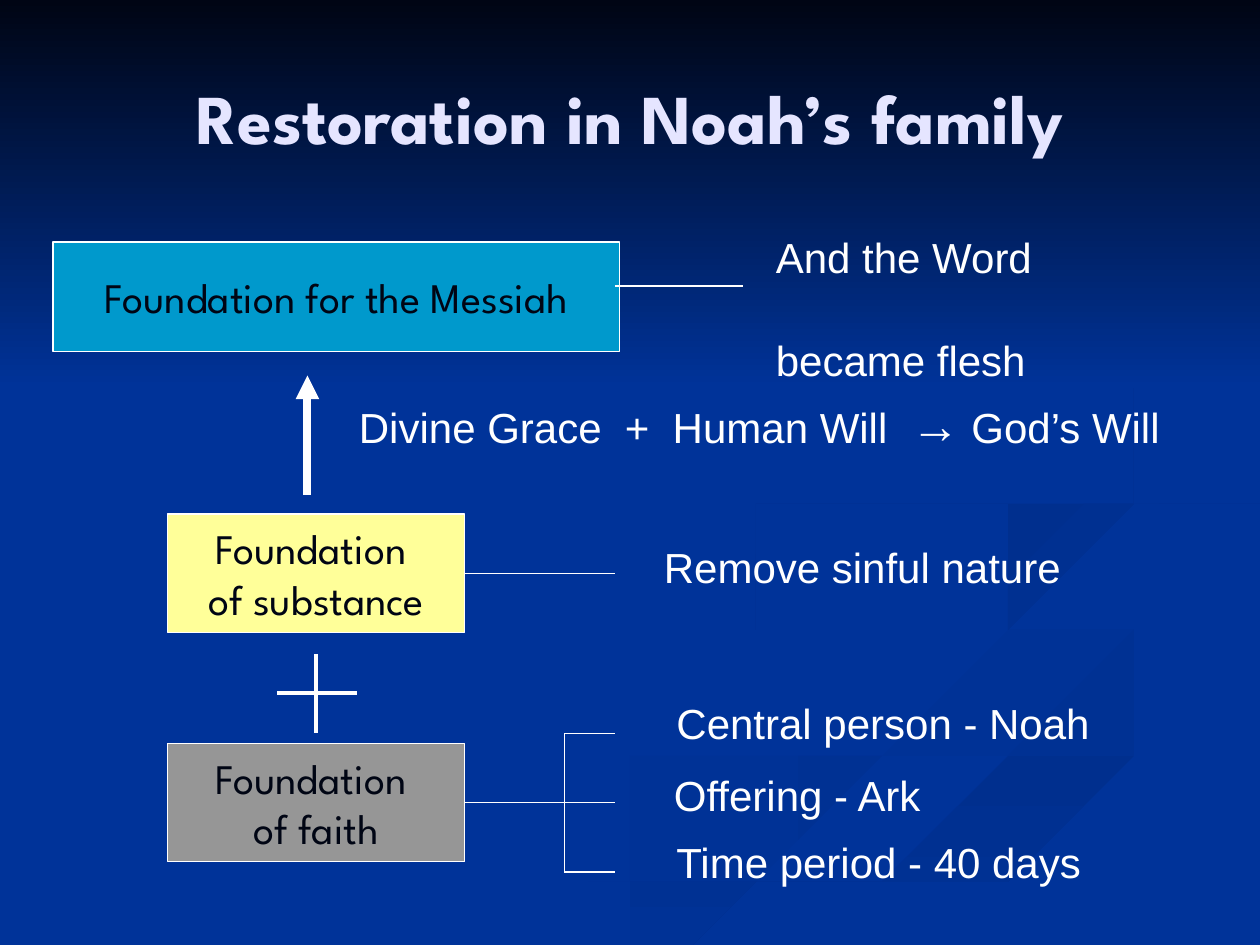
from dataclasses import dataclass

from lxml import etree
from pptx import Presentation
from pptx.dml.color import RGBColor
from pptx.enum.shapes import MSO_CONNECTOR, MSO_SHAPE
from pptx.enum.text import MSO_ANCHOR, MSO_AUTO_SIZE, PP_ALIGN
from pptx.oxml.ns import qn
from pptx.util import Inches, Pt

STRAIGHT = MSO_CONNECTOR.STRAIGHT
RECTANGLE = MSO_SHAPE.RECTANGLE
MIDDLE = MSO_ANCHOR.MIDDLE
CENTER = PP_ALIGN.CENTER
GROW = MSO_AUTO_SIZE.SHAPE_TO_FIT_TEXT
FIXED = MSO_AUTO_SIZE.NONE
RIGHT_SIDE = 3
SLIDE_WIDTH, SLIDE_HEIGHT = 10, 7.5
CURVE_STEPS = 4


@dataclass(frozen=True)
class Theme:
    background: str = "003399"
    night: str = "000514"
    shade: str = "002F8E"
    haze: str = "003193"
    title: str = "E5E5FF"
    white: str = "FFFFFF"
    messiah: str = "0099CC"
    substance: str = "FFFF99"
    faith: str = "969696"
    heading_font: str = "League Spartan"
    body_font: str = "Arial"
    title_size: float = 40
    body_size: float = 24
    arrow_size: float = 28
    thin: float = 0.75
    medium: float = 2.25
    thick: float = 4.5
    line_gap: float = 30


@dataclass(frozen=True)
class Swoosh:
    start: str
    end: str
    angle: int
    points: tuple


@dataclass(frozen=True)
class Box:
    text: str
    left: float
    top: float
    width: float
    height: float
    color: str


@dataclass(frozen=True)
class Label:
    text: str
    left: float
    top: float
    width: float
    height: float = 0.5


@dataclass(frozen=True)
class Line:
    begin: tuple
    end: tuple
    weight: float


THEME = Theme()

SWOOSHES = (
    Swoosh(THEME.background, THEME.haze, 0, (
        (7.81, 5.53), (6.42, 5.07), (5.75, 4.6), (6.31, 5.05), (7.62, 5.47), (7.8, 5.79),
        (5.39, 6.49), (3, 7.49), (3.61, 7.49), (5.64, 6.65), (7.56, 6.14), (8, 5.81))),
    Swoosh(THEME.background, THEME.haze, 45, (
        (9.43, 5.7), (8.7, 5.3), (7.58, 4.98), (7.24, 4.64), (7.46, 5), (8.38, 5.36),
        (9.17, 5.76), (8.94, 6.05), (9.32, 5.89))),
    Swoosh(THEME.shade, THEME.background, 90, (
        (5.03, 7.49), (5.71, 7.49), (7.22, 6.82), (9.98, 6.09), (9.98, 5.81), (7.64, 6.47))),
    Swoosh(THEME.background, THEME.background, 0, (
        (7.25, 4.64), (8.12, 5.15), (9.43, 5.7), (8.43, 6.18), (4.77, 7.49), (5.19, 7.47),
        (7.65, 6.47), (9.99, 5.81), (9.99, 5.38), (8.17, 4.92), (8, 4.42), (9.99, 4.02),
        (9.99, 3.87), (7.7, 4.27))),
    Swoosh(THEME.shade, THEME.background, 45, (
        (7.81, 4.6), (8.26, 4.96), (8.16, 4.59), (9.98, 4.2), (9.98, 4.02), (8.35, 4.3))),
    Swoosh(THEME.shade, THEME.background, 45, (
        (6.83, 4.3), (8.41, 3.96), (8.94, 3.44), (8.54, 2.83), (7.62, 2.33), (8.62, 2.92),
        (8.82, 3.54), (7.63, 3.98), (6.05, 4.33), (5.77, 4.62), (6.22, 5), (6.01, 4.56))),
)

FAITH = Box("Foundation \nof faith", 1.33, 5.9, 2.36, 0.94, THEME.faith)
SUBSTANCE = Box("Foundation \nof substance", 1.33, 4.08, 2.36, 0.94, THEME.substance)
MESSIAH = Box("Foundation for the Messiah", 0.42, 1.92, 4.5, 0.87, THEME.messiah)

BRACKET_LEFT, LABEL_SIDE = 4.48, 4.88
BRACKET_TOP, BRACKET_BOTTOM = 5.82, 6.92
LINES = (
    Line((2.2, 5.5), (2.83, 5.5), THEME.medium),
    Line((2.51, 5.19), (2.51, 5.82), THEME.medium),
    Line((LABEL_SIDE, 2.27), (5.9, 2.27), THEME.thin),
    Line((BRACKET_LEFT, BRACKET_TOP), (BRACKET_LEFT, BRACKET_BOTTOM), THEME.thin),
    *(Line((BRACKET_LEFT, y), (LABEL_SIDE, y), THEME.thin) for y in (BRACKET_TOP, BRACKET_BOTTOM)),
)
RISING_ARROW = Line((2.44, 2.98), (2.44, 3.93), THEME.thick)

TITLE = Label("Restoration in Noah’s family", 0.5, 0.3, 9, 1.25)
LABELS = (
    Label("Offering - Ark", 5.25, 6.06, 2.18),
    Label("Central person - Noah", 5.27, 5.49, 3.51),
    Label("Time period - 40 days", 5.27, 6.59, 3.44),
    Label("Remove sinful nature", 5.17, 4.25, 3.38),
)
WORD = Label("And the Word\nbecame flesh", 6.06, 1.79, 2.27, 0.91)
GRACE = Label("Divine Grace  +  Human Will  ", 2.75, 3.08, 6.62, 0.57)


def format_text(text_frame, font_name: str, size: float, color: str, bold: bool = False) -> None:
    for paragraph in text_frame.paragraphs:
        for run in paragraph.runs:
            run.font.name, run.font.size, run.font.bold = font_name, Pt(size), bold
            run.font.color.rgb = RGBColor.from_string(color)


def blend(before: float, start: float, end: float, after: float, t: float) -> float:
    bend = (end - before) * t * (1 - t) ** 2 - (after - start) * t ** 2 * (1 - t)
    return start + (end - start) * t * t * (3 - 2 * t) + bend / 3


def smooth_outline(points: tuple) -> list:
    outline = []
    for index in range(len(points)):
        corners = [points[(index + offset) % len(points)] for offset in (-1, 0, 1, 2)]
        for step in range(CURVE_STEPS):
            x, y = (blend(*values, step / CURVE_STEPS) for values in zip(*corners))
            outline.append((min(x, SLIDE_WIDTH), min(y, SLIDE_HEIGHT)))
    return outline


def fill_gradient(shape, start: str, end: str, angle: int) -> None:
    shape.shadow.inherit = False
    shape.line.fill.background()
    shape.fill.gradient()
    shape.fill.gradient_angle = -angle % 360
    for stop, color in zip(shape.fill.gradient_stops, (start, end)):
        stop.color.rgb = RGBColor.from_string(color)


def add_swoosh(slide, swoosh: Swoosh) -> None:
    outline = smooth_outline(swoosh.points)
    builder = slide.shapes.build_freeform(*outline[0], scale=Inches(1))
    builder.add_line_segments(outline[1:], close=True)
    fill_gradient(builder.convert_to_shape(), swoosh.start, swoosh.end, swoosh.angle)


def add_box(slide, box: Box):
    shape = slide.shapes.add_shape(
        RECTANGLE, Inches(box.left), Inches(box.top), Inches(box.width), Inches(box.height))
    shape.shadow.inherit = False
    shape.fill.solid()
    shape.fill.fore_color.rgb = RGBColor.from_string(box.color)
    shape.line.color.rgb = RGBColor.from_string(THEME.white)
    shape.line.width = Pt(THEME.thin)
    text_frame = shape.text_frame
    text_frame.text = box.text
    text_frame.word_wrap = False
    text_frame.vertical_anchor = MIDDLE
    for paragraph in text_frame.paragraphs:
        paragraph.alignment = CENTER
    format_text(text_frame, THEME.heading_font, THEME.body_size, THEME.night)
    return shape


def add_line(slide, line: Line):
    connector = slide.shapes.add_connector(STRAIGHT, *map(Inches, line.begin + line.end))
    connector.line.color.rgb = RGBColor.from_string(THEME.white)
    connector.line.width = Pt(line.weight)
    etree.SubElement(connector.element.spPr, qn("a:effectLst"))
    return connector


def add_branch(slide, box: Box) -> None:
    shape = add_box(slide, box)
    right, middle = box.left + box.width, box.top + box.height / 2
    branch = add_line(slide, Line((right, middle), (LABEL_SIDE, middle), THEME.thin))
    branch.begin_connect(shape, RIGHT_SIDE)


def add_label(slide, label: Label):
    shape = slide.shapes.add_textbox(
        Inches(label.left), Inches(label.top), Inches(label.width), Inches(label.height))
    text_frame = shape.text_frame
    text_frame.text = label.text
    text_frame.word_wrap = False
    text_frame.auto_size = GROW
    format_text(text_frame, THEME.body_font, THEME.body_size, THEME.white)
    return text_frame


def add_title(slide) -> None:
    text_frame = add_label(slide, TITLE)
    text_frame.auto_size = FIXED
    text_frame.word_wrap = True
    text_frame.vertical_anchor = MIDDLE
    text_frame.paragraphs[0].alignment = CENTER
    format_text(text_frame, THEME.heading_font, THEME.title_size, THEME.title, True)


def add_grace(slide) -> None:
    text_frame = add_label(slide, GRACE)
    paragraph = text_frame.paragraphs[0]
    arrow, result = paragraph.add_run(), paragraph.add_run()
    arrow.text, result.text = "→", " God’s Will"
    format_text(text_frame, THEME.body_font, THEME.body_size, THEME.white)
    arrow.font.size, arrow.font.bold = Pt(THEME.arrow_size), True


def main() -> None:
    """Build the slide on the restoration in Noah's family."""
    presentation = Presentation()
    presentation.slide_width, presentation.slide_height = Inches(SLIDE_WIDTH), Inches(SLIDE_HEIGHT)
    slide = presentation.slides.add_slide(presentation.slide_layouts[6])
    slide.background.fill.solid()
    slide.background.fill.fore_color.rgb = RGBColor.from_string(THEME.background)
    for swoosh in SWOOSHES:
        add_swoosh(slide, swoosh)
    sky = slide.shapes.add_shape(RECTANGLE, 0, 0, Inches(SLIDE_WIDTH), Inches(3.08))
    fill_gradient(sky, THEME.night, THEME.background, 90)
    add_title(slide)
    for box in (FAITH, SUBSTANCE):
        add_branch(slide, box)
    add_box(slide, MESSIAH)
    for line in LINES:
        add_line(slide, line)
    arrow = add_line(slide, RISING_ARROW)
    etree.SubElement(arrow.element.spPr.find(qn("a:ln")), qn("a:headEnd"), type="triangle")
    for label in LABELS:
        add_label(slide, label)
    add_label(slide, WORD).paragraphs[1].space_before = Pt(THEME.line_gap)
    add_grace(slide)
    presentation.save("out.pptx")


if __name__ == "__main__":
    main()
